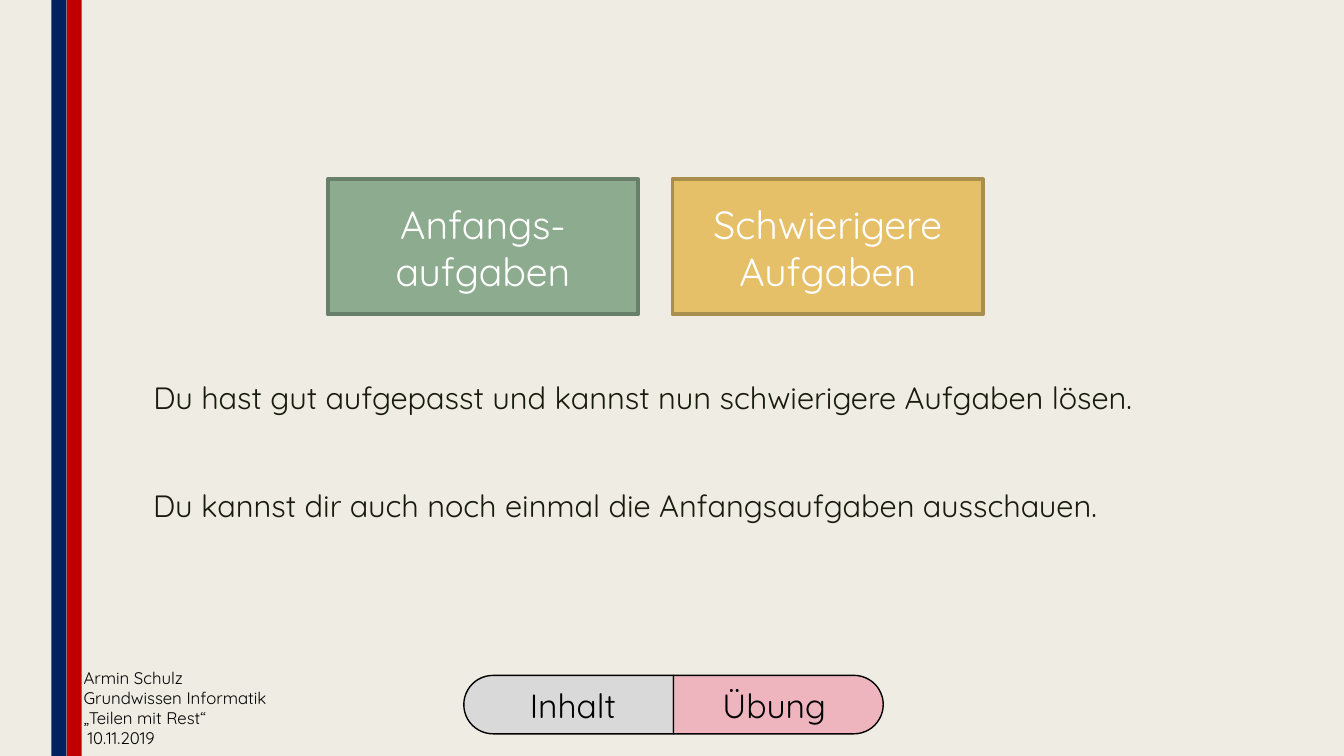
from dataclasses import dataclass

from pptx import Presentation
from pptx.dml.color import RGBColor
from pptx.enum.shapes import MSO_SHAPE
from pptx.enum.text import MSO_ANCHOR, MSO_AUTO_SIZE, PP_ALIGN
from pptx.util import Inches, Pt


@dataclass(frozen=True)
class Theme:
    font: str = "Quicksand"
    background: str = "EFEDE3"
    text: str = "191B0E"
    black: str = "000000"
    white: str = "FFFFFF"
    footer_size: int = 12
    body_size: int = 22
    navigation_size: int = 24
    button_size: int = 28
    body_spacing: float = 0.89
    navigation_line: float = 1
    button_line: float = 2.75


THEME = Theme()

# left, fill
STRIPES = [(0.66, "C00000"), (0.51, "002060")]
STRIPE_WIDTH = 0.15

# lines, (left, top, width, height)
FOOTERS = [
    (["10.11.2019"], (0.77, 7.17, 2.18, 0.22)),
    (["Armin Schulz", "Grundwissen Informatik", "„Teilen mit Rest“"],
     (0.73, 6.57, 2.18, 0.71)),
]

# label, fill, rotation, direction that keeps the label upright
NAVIGATION = [
    ("Inhalt", "D9D9D9", 270, "vert"),
    ("Übung", "EEB5BF", 90, "vert270"),
]
NAVIGATION_LEFT, NAVIGATION_MIDDLE = 4.6, 6.99
NAVIGATION_LENGTH, NAVIGATION_THICKNESS = 2.08, 0.58

# lines, fill, outline
BUTTONS = [
    (["Anfangs-aufgaben"], "8DAB8E", "687F69"),
    (["Schwierigere", "Aufgaben"], "E6C069", "AA8E4E"),
]
BUTTON_LEFT, BUTTON_TOP, BUTTON_PITCH = 3.25, 1.78, 3.42
BUTTON_WIDTH, BUTTON_HEIGHT = 3.08, 1.34

TITLE = "Du hast gut aufgepasst und kannst nun schwierigere Aufgaben lösen."
TITLE_BOX = (1.42, 3.75, 10.96, 0.56)
HINT = "Du kannst dir auch noch einmal die Anfangsaufgaben ausschauen."
HINT_BOX = (1.42, 4.82, 10.5, 0.56)


def color(value):
    return RGBColor.from_string(value)


def inches(box):
    return [Inches(length) for length in box]


def write(shape, lines, size, text_color, align=PP_ALIGN.LEFT,
          anchor=MSO_ANCHOR.TOP, spacing=None):
    frame = shape.text_frame
    frame.text = "\n".join(lines)
    frame.word_wrap = True
    frame.auto_size = MSO_AUTO_SIZE.NONE
    frame.vertical_anchor = anchor
    for paragraph in frame.paragraphs:
        paragraph.alignment = align
        if spacing:
            paragraph.line_spacing = spacing
        for run in paragraph.runs:
            run.font.name = THEME.font
            run.font.size = Pt(size)
            run.font.color.rgb = color(text_color)


def add_filled(slide, kind, box, fill, outline=None, line_width=0):
    shape = slide.shapes.add_shape(kind, *inches(box))
    shape.shadow.inherit = False
    shape.fill.solid()
    shape.fill.fore_color.rgb = color(fill)
    if outline:
        shape.line.color.rgb = color(outline)
        shape.line.width = Pt(line_width)
    else:
        shape.line.fill.background()
    return shape


def add_navigation(slide):
    """Two half pills, each an upright shape turned on its side about its centre."""
    for index, (label, fill, rotation, direction) in enumerate(NAVIGATION):
        center = NAVIGATION_LEFT + (index + 0.5) * NAVIGATION_LENGTH
        box = (center - NAVIGATION_THICKNESS / 2,
               NAVIGATION_MIDDLE - NAVIGATION_LENGTH / 2,
               NAVIGATION_THICKNESS, NAVIGATION_LENGTH)
        half = add_filled(slide, MSO_SHAPE.ROUND_2_SAME_RECTANGLE, box, fill,
                          THEME.black, THEME.navigation_line)
        half.adjustments[0] = 0.5
        half.adjustments[1] = 0
        half.rotation = rotation
        write(half, [label], THEME.navigation_size, THEME.black,
              PP_ALIGN.CENTER, MSO_ANCHOR.MIDDLE)
        half.text_frame._txBody.bodyPr.set("vert", direction)


def add_buttons(slide):
    for index, (lines, fill, outline) in enumerate(BUTTONS):
        box = (BUTTON_LEFT + index * BUTTON_PITCH, BUTTON_TOP,
               BUTTON_WIDTH, BUTTON_HEIGHT)
        button = add_filled(slide, MSO_SHAPE.RECTANGLE, box, fill,
                            outline, THEME.button_line)
        write(button, lines, THEME.button_size, THEME.white,
              PP_ALIGN.CENTER, MSO_ANCHOR.MIDDLE)


def main():
    presentation = Presentation()
    presentation.slide_width = Inches(13.33)
    presentation.slide_height = Inches(7.5)
    slide = presentation.slides.add_slide(presentation.slide_layouts[5])
    slide.background.fill.solid()
    slide.background.fill.fore_color.rgb = color(THEME.background)

    for left, fill in STRIPES:
        add_filled(slide, MSO_SHAPE.RECTANGLE, (left, 0, STRIPE_WIDTH, 7.5), fill)
    for lines, box in FOOTERS:
        footer = slide.shapes.add_textbox(*inches(box))
        write(footer, lines, THEME.footer_size, THEME.black)
    add_navigation(slide)
    add_buttons(slide)

    title = slide.shapes.title
    title.left, title.top, title.width, title.height = inches(TITLE_BOX)
    hint = slide.shapes.add_textbox(*inches(HINT_BOX))
    for shape, text in ((title, TITLE), (hint, HINT)):
        write(shape, [text], THEME.body_size, THEME.text,
              spacing=THEME.body_spacing)

    presentation.save("out.pptx")


if __name__ == "__main__":
    main()
